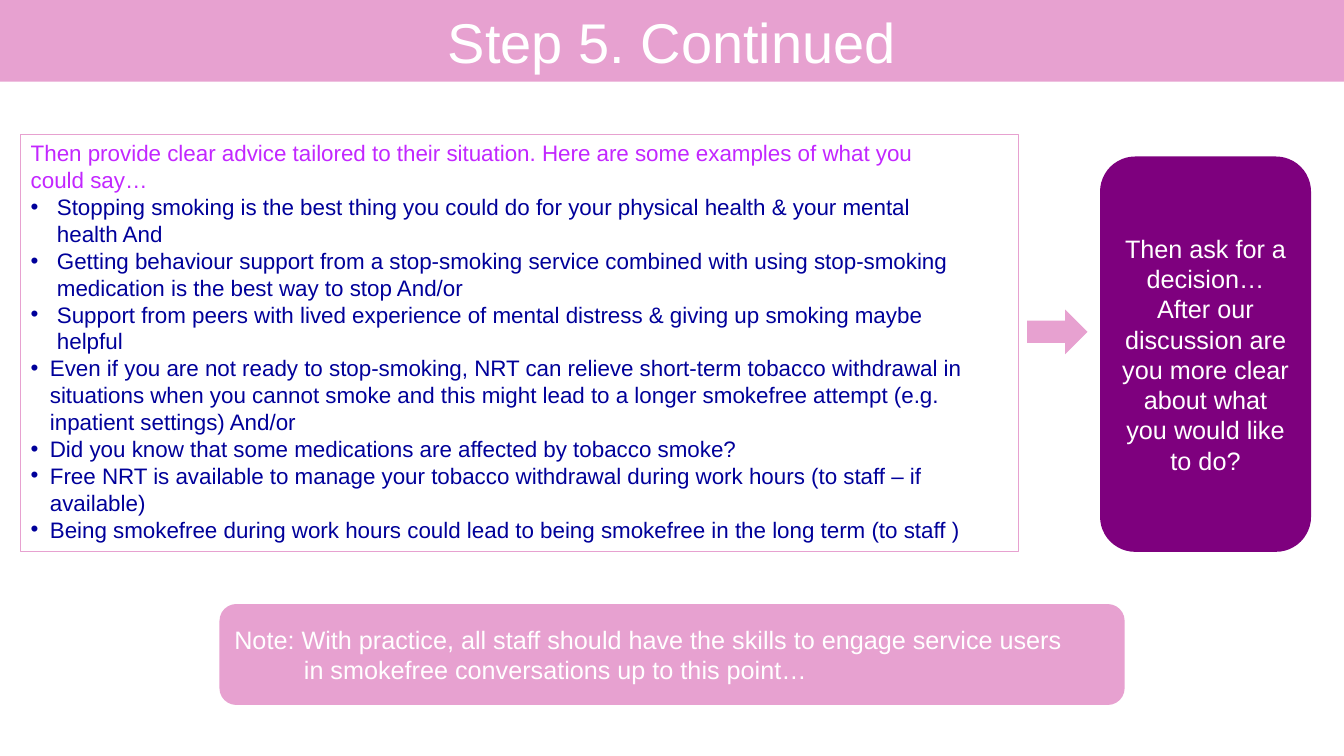
"""Build the "Step 5. Continued" slide on smokefree advice."""
from dataclasses import dataclass
from typing import Optional

from lxml.etree import SubElement
from pptx import Presentation
from pptx.dml.color import RGBColor
from pptx.enum.shapes import MSO_SHAPE as Shape
from pptx.enum.text import MSO_ANCHOR as Anchor, PP_ALIGN as Align
from pptx.oxml.ns import qn
from pptx.util import Inches, Pt

WIDTH, HEIGHT = Inches(13.33), Inches(7.5)
PINK = RGBColor(0xE7, 0xA1, 0xD0)
PURPLE = RGBColor(0x7E, 0x00, 0x7E)
VIOLET = RGBColor(0xC2, 0x27, 0xFF)
NAVY = RGBColor(0x00, 0x00, 0x9A)
WHITE = RGBColor(0xFF, 0xFF, 0xFF)
FONT = "Arial"


@dataclass(frozen=True)
class Para:
    """Lines of one paragraph, with a hanging indent in inches."""
    lines: tuple[str, ...]
    size: int = 18
    color: RGBColor = WHITE
    align: Align = Align.LEFT
    hang: float = 0
    bullet: bool = False


@dataclass(frozen=True)
class Box:
    """A shape placed by percentages of the slide's width and height."""
    kind: Shape
    left: float
    top: float
    width: float
    height: float
    paras: tuple[Para, ...] = ()
    fill: Optional[RGBColor] = PINK
    line: Optional[RGBColor] = None
    anchor: Anchor = Anchor.MIDDLE


def advice(*lines: str, hang: float = 0.19) -> Para:
    """Describe one bulleted piece of advice."""
    return Para(lines, 16, NAVY, hang=hang, bullet=True)


ADVICE = (
    Para(("Then provide clear advice tailored to their situation. Here are some examples of what you",
          "could say…"), 16, VIOLET),
    advice("Stopping smoking is the best thing you could do for your physical health & your mental",
           "health And", hang=0.26),
    advice("Getting behaviour support from a stop-smoking service combined with using stop-smoking",
           "medication is the best way to stop And/or", hang=0.26),
    advice("Support from peers with lived experience of mental distress & giving up smoking maybe",
           "helpful", hang=0.26),
    advice("Even if you are not ready to stop-smoking, NRT can relieve short-term tobacco withdrawal in",
           "situations when you cannot smoke and this might lead to a longer smokefree attempt (e.g.",
           "inpatient settings) And/or"),
    advice("Did you know that some medications are affected by tobacco smoke?"),
    advice("Free NRT is available to manage your tobacco withdrawal during work hours (to staff – if",
           "available)"),
    advice("Being smokefree during work hours could lead to being smokefree in the long term (to staff )"),
)
DECISION = (
    Para(("Then ask for a decision…",), align=Align.CENTER),
    Para(("After our discussion are you more clear about what you would like to do?",),
         align=Align.CENTER),
)
NOTE = Para(("Note: With practice, all staff should have the skills to engage service users",
             "in smokefree conversations up to this point…"), hang=0.69)
TITLE = Para(("Step 5. Continued",), 40, align=Align.CENTER)

BOXES = (
    Box(Shape.RECTANGLE, 0, 0, 100, 10.8, (TITLE,)),
    Box(Shape.RECTANGLE, 1.55, 17.8, 74.25, 55.2, ADVICE, None, PINK, Anchor.TOP),
    Box(Shape.ROUNDED_RECTANGLE, 81.85, 20.7, 15.7, 52.3, DECISION, PURPLE),
    Box(Shape.RIGHT_ARROW, 76.42, 40.95, 4.5, 5.9),
    Box(Shape.ROUNDED_RECTANGLE, 16.33, 79.9, 67.35, 13.35, (NOTE,)),
)


def write_para(paragraph, para: Para) -> None:
    """Write the lines of a paragraph and format it."""
    for index, line in enumerate(para.lines):
        if index:
            paragraph.add_line_break()
        paragraph.add_run().text = line
    paragraph.alignment = para.align
    properties = paragraph._p.get_or_add_pPr()
    if para.hang:
        properties.set("marL", str(Inches(para.hang)))
        properties.set("indent", str(-Inches(para.hang)))
    if para.bullet:
        SubElement(properties, qn("a:buFont"), typeface=FONT)
        SubElement(properties, qn("a:buChar"), char="•")
    font = paragraph.font
    font.name, font.size = FONT, Pt(para.size)
    font.color.rgb = para.color


def draw_box(slide, box: Box) -> None:
    """Draw a box with its fill, outline and text."""
    shape = slide.shapes.add_shape(
        box.kind, round(WIDTH * box.left / 100), round(HEIGHT * box.top / 100),
        round(WIDTH * box.width / 100), round(HEIGHT * box.height / 100))
    shape.shadow.inherit = False
    if box.fill is None:
        shape.fill.background()
    else:
        shape.fill.solid()
        shape.fill.fore_color.rgb = box.fill
    if box.line is None:
        shape.line.fill.background()
    else:
        shape.line.color.rgb = box.line
        shape.line.width = Pt(0.75)
    frame = shape.text_frame
    frame.word_wrap = True
    frame.vertical_anchor = box.anchor
    for index, para in enumerate(box.paras):
        write_para(frame.add_paragraph() if index else frame.paragraphs[0], para)


def main() -> None:
    """Create the deck and save it."""
    deck = Presentation()
    deck.slide_width, deck.slide_height = WIDTH, HEIGHT
    slide = deck.slides.add_slide(deck.slide_layouts[6])
    for box in BOXES:
        draw_box(slide, box)
    deck.save("out.pptx")


if __name__ == "__main__":
    main()
